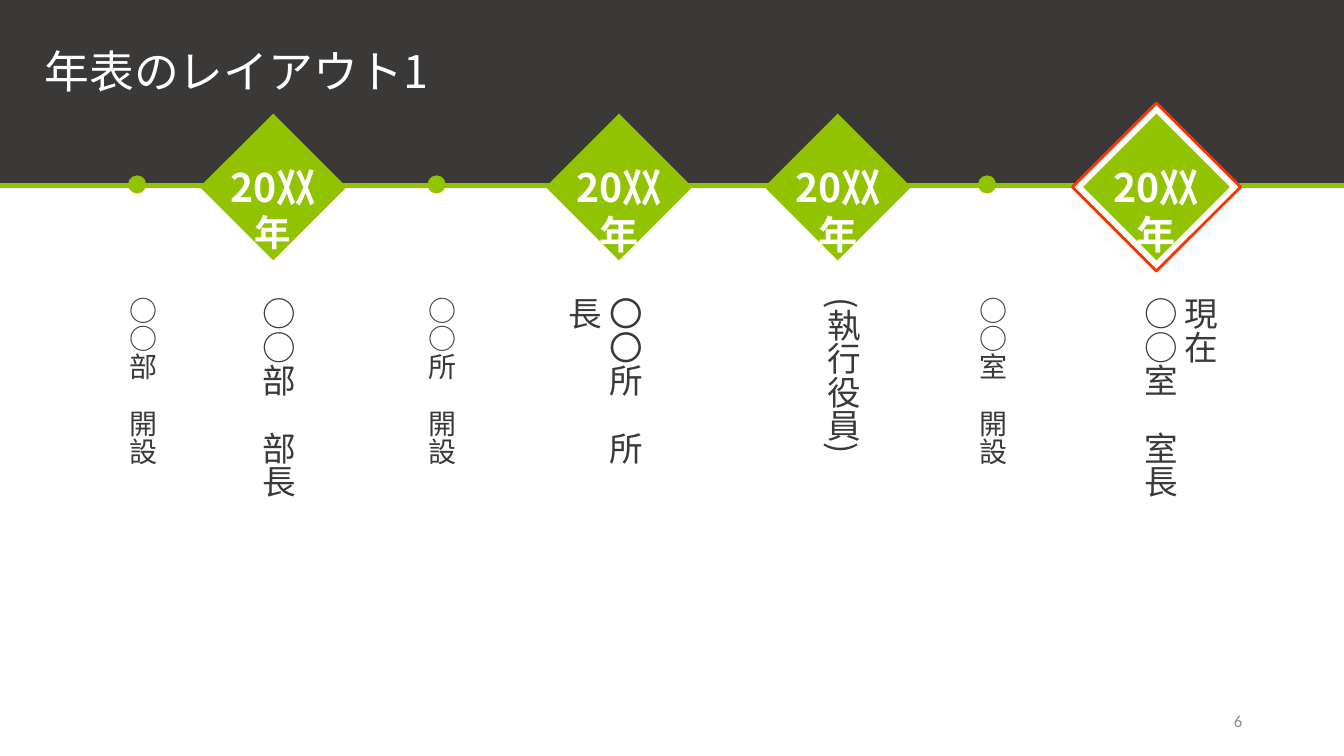
from pptx import Presentation
from pptx.dml.color import RGBColor
from pptx.enum.shapes import MSO_CONNECTOR, MSO_SHAPE
from pptx.enum.text import MSO_ANCHOR, MSO_AUTO_SIZE, PP_ALIGN
from pptx.oxml.ns import qn
from pptx.util import Inches, Pt
from lxml.etree import SubElement
from dataclasses import dataclass

# Content
TITLE = "年表のレイアウト1"
PAGE_NUMBER = "6"
# Openings: centre x, label
OPENINGS = [(1.36, "○○部\u3000開設"), (4.33, "○○所\u3000開設"), (9.79, "○○室\u3000開設")]
# Positions held: diamond centre x, year runs (text, size), highlighted
YEARS = [
    (2.71, [("20〷", 28), ("年", 26)], False),
    (6.14, [("20〷年", 28)], False),
    (8.31, [("20〷年", 28)], False),
    (11.47, [("20〷年", 28)], True),
]
# Position labels: centre x, width, height, wraps, lines
POSITIONS = [
    (2.7, 0.61, 3.1, True, ["○○部\u3000部長"]),
    (6.14, 0.61, 2.13, True, ["〇〇所\u3000所長"]),
    (8.31, 0.61, 1.74, False, ["(執行役員)"]),
    (11.65, 1.01, 2.12, False, ["現在", "○○室\u3000室長"]),
]


@dataclass(frozen=True)
class Theme:
    dark: str = "3B3838"
    green: str = "91C300"
    red: str = "FF3300"
    white: str = "FFFFFF"
    grey: str = "8C8C8C"
    font: str = "Noto Sans CJK JP"
    number_font: str = "Calibri"
    title_size: int = 32
    position_size: int = 24
    opening_size: int = 20
    number_size: int = 12


theme = Theme()
SLIDE_WIDTH = 13.33
AXIS_Y = 1.84
DIAMOND_Y = 1.855
LABEL_TOP = 2.85

presentation = Presentation()
presentation.slide_width = Inches(SLIDE_WIDTH)
presentation.slide_height = Inches(7.5)
slide = presentation.slides.add_slide(presentation.slide_layouts[5])


def style_run(run, size, color, name=theme.font, bold=False):
    run.font.size = Pt(size)
    run.font.bold = bold
    run.font.color.rgb = RGBColor.from_string(color)
    run.font.name = name
    SubElement(run.font._element, qn("a:ea")).set("typeface", name)


def add_centred(preset, center_x, center_y, width, height, fill, line=None, rotation=0):
    shape = slide.shapes.add_shape(
        preset, Inches(center_x - width / 2), Inches(center_y - height / 2),
        Inches(width), Inches(height))
    shape.shadow.inherit = False
    shape.rotation = rotation
    shape.fill.solid()
    shape.fill.fore_color.rgb = RGBColor.from_string(fill)
    if line:
        shape.line.color.rgb = RGBColor.from_string(line)
        shape.line.width = Pt(2)
    else:
        shape.line.fill.background()


def add_text_box(left, top, width, height, wrap=True):
    box = slide.shapes.add_textbox(Inches(left), Inches(top), Inches(width), Inches(height))
    box.text_frame.word_wrap = wrap
    return box.text_frame


def add_vertical_label(center_x, width, height, wrap, lines, size):
    frame = add_text_box(center_x - width / 2, LABEL_TOP, width, height, wrap)
    frame.auto_size = MSO_AUTO_SIZE.SHAPE_TO_FIT_TEXT
    frame._txBody.bodyPr.set("vert", "eaVert")
    frame.text = "\n".join(lines)
    for paragraph in frame.paragraphs:
        style_run(paragraph.runs[0], size, theme.dark)


# Header band and time axis
add_centred(MSO_SHAPE.RECTANGLE, SLIDE_WIDTH / 2, 0.93, SLIDE_WIDTH, 1.86, theme.dark)
axis = slide.shapes.add_connector(
    MSO_CONNECTOR.STRAIGHT, 0, Inches(AXIS_Y), Inches(SLIDE_WIDTH), Inches(AXIS_Y))
axis.line.color.rgb = RGBColor.from_string(theme.green)
axis.line.width = Pt(3)
SubElement(axis._element.spPr, qn("a:effectLst"))

# Title, raised above the band
title = slide.shapes.title
slide.shapes._spTree.append(title._element)
title.left, title.top, title.width, title.height = map(Inches, (0.34, 0.37, 4.94, 0.67))
title.text_frame.text = TITLE
title.text_frame.auto_size = MSO_AUTO_SIZE.NONE
title.text_frame.vertical_anchor = MSO_ANCHOR.MIDDLE
title.text_frame.paragraphs[0].alignment = PP_ALIGN.LEFT
style_run(title.text_frame.paragraphs[0].runs[0], theme.title_size, theme.white)

# Page number
number_frame = add_text_box(9.42, 6.95, 3, 0.4)
number_frame.text = PAGE_NUMBER
number_frame.vertical_anchor = MSO_ANCHOR.MIDDLE
number_frame.paragraphs[0].alignment = PP_ALIGN.RIGHT
style_run(number_frame.paragraphs[0].runs[0], theme.number_size, theme.grey, theme.number_font)

# Year diamonds
for center_x, year_runs, highlighted in YEARS:
    if highlighted:
        add_centred(MSO_SHAPE.RECTANGLE, center_x, DIAMOND_Y, 1.18, 1.18,
                    theme.white, theme.red, rotation=315)
    add_centred(MSO_SHAPE.RECTANGLE, center_x, DIAMOND_Y, 1.03, 1.03,
                theme.green, rotation=315)
    year_frame = add_text_box(center_x - 0.7, 1.57, 1.4, 0.57)
    year_paragraph = year_frame.paragraphs[0]
    year_paragraph.alignment = PP_ALIGN.CENTER
    for text, size in year_runs:
        run = year_paragraph.add_run()
        run.text = text
        style_run(run, size, theme.white, bold=True)

# Opening dots and labels
for center_x, label in OPENINGS:
    add_centred(MSO_SHAPE.OVAL, center_x, 1.83, 0.18, 0.18, theme.green)
    add_vertical_label(center_x, 0.54, 2.48, True, [label], theme.opening_size)

# Position labels
for center_x, width, height, wrap, lines in POSITIONS:
    add_vertical_label(center_x, width, height, wrap, lines, theme.position_size)

presentation.save("out.pptx")
